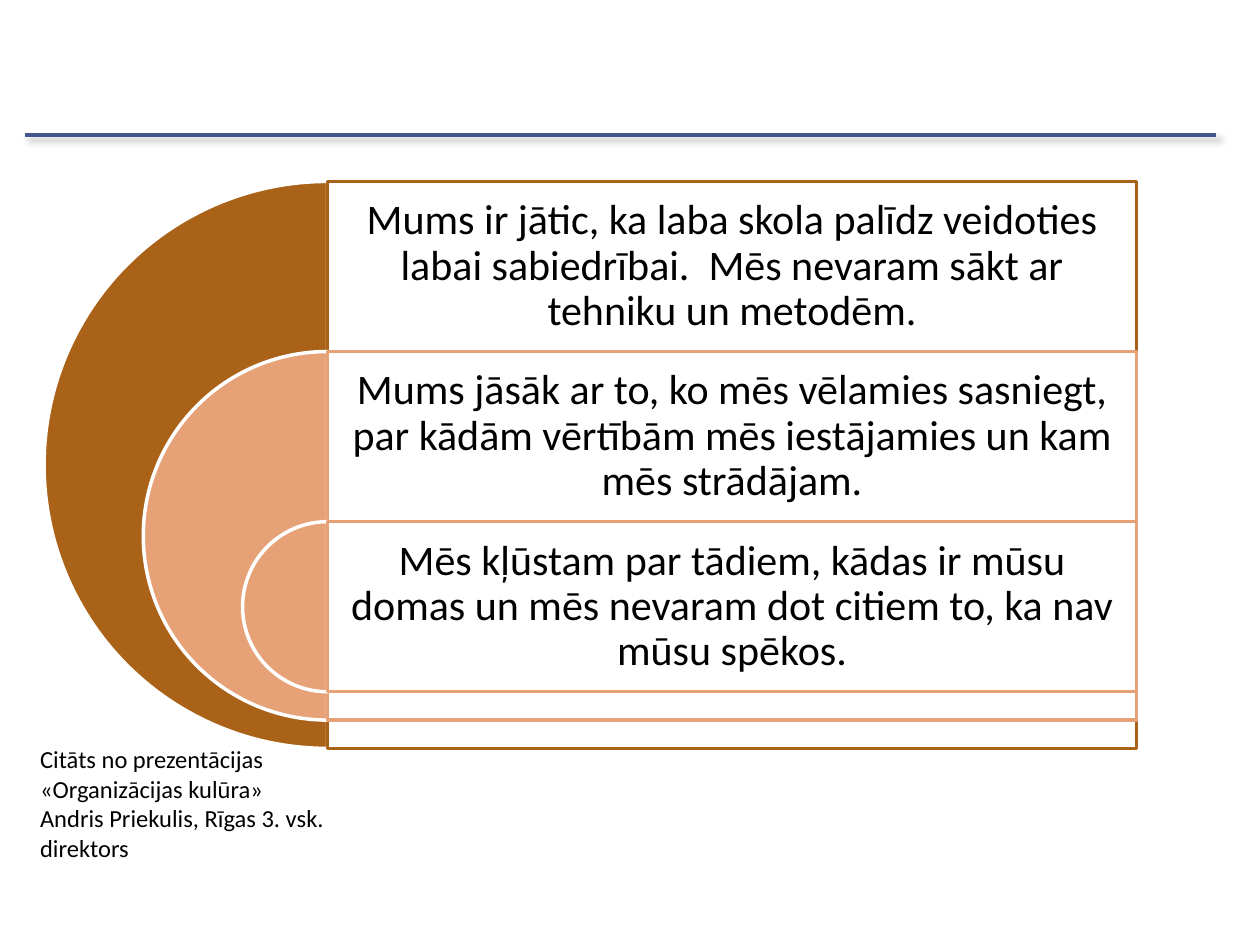
from lxml import etree
from pptx import Presentation
from pptx.dml.color import RGBColor
from pptx.enum.shapes import MSO_CONNECTOR, MSO_SHAPE
from pptx.enum.text import MSO_ANCHOR, MSO_AUTO_SIZE, PP_ALIGN
from pptx.oxml import parse_xml
from pptx.oxml.ns import nsdecls, qn
from pptx.util import Inches, Pt

LEVELS = [
    ("AA6219", "Mums ir jātic, ka laba skola palīdz veidoties labai sabiedrībai.  "
               "Mēs nevaram sākt ar tehniku un metodēm."),
    ("E6A177", "Mums jāsāk ar to, ko mēs vēlamies sasniegt, par kādām vērtībām "
               "mēs iestājamies un kam mēs strādājam."),
    ("E6A177", "Mēs kļūstam par tādiem, kādas ir mūsu domas un mēs nevaram dot "
               "citiem to, ka nav mūsu spēkos."),
]
CITATION = ["Citāts no prezentācijas «Organizācijas kulūra»",
            "Andris Priekulis, Rīgas 3. vsk. direktors"]
CENTER, TOP, DIAMETER, WIDTH = 2.6, 1.44, 4.5, 6.42
BAND, SHRINK = DIAMETER * 0.3, DIAMETER * 0.35
SHADOW = f"""<a:effectLst {nsdecls("a")}>
  <a:outerShdw blurRad="50800" dist="38100" dir="2700000" algn="tl" rotWithShape="0">
    <a:srgbClr val="000000"><a:alpha val="40000"/></a:srgbClr>
  </a:outerShdw>
</a:effectLst>"""


def color(value):
    """Turn a hex string into a colour."""
    return RGBColor.from_string(value)


def add_shape(page, kind, frame, fill, line):
    """Add a flat shape with a 2 pt outline."""
    shape = page.shapes.add_shape(kind, *map(Inches, frame))
    shape.shadow.inherit = False
    shape.fill.solid()
    shape.fill.fore_color.rgb = color(fill)
    shape.line.color.rgb = color(line)
    shape.line.width = Pt(2)
    return shape


def add_text(page, frame, lines, size):
    """Add a wrapping text box with one paragraph per line."""
    box = page.shapes.add_textbox(*map(Inches, frame))
    text = box.text_frame
    text.word_wrap = True
    text.text = "\n".join(lines)
    for para in text.paragraphs:
        para.font.name = "Calibri"
        para.font.size = Pt(size)
        para.font.color.rgb = color("000000")
    return text


def add_rule(page):
    """Draw the shadowed heading rule."""
    rule = page.shapes.add_connector(
        MSO_CONNECTOR.STRAIGHT, *map(Inches, (0.2, 1.07, 9.65, 1.07)))
    rule.line.color.rgb = color("42568D")
    rule.line.width = Pt(2.25)
    rule._element.spPr.append(parse_xml(SHADOW))


def add_level(page, index, accent, statement):
    """Draw one half circle with its panel and statement."""
    size = DIAMETER - index * SHRINK
    top = TOP + index * BAND
    pie = add_shape(page, MSO_SHAPE.PIE, (CENTER - size / 2, top, size, size),
                    accent, "FFFFFF")
    pie.adjustments[0], pie.adjustments[1] = 54, 162

    panel = add_shape(page, MSO_SHAPE.RECTANGLE, (CENTER, top, WIDTH, size),
                      "FFFFFF", accent)
    tint = panel._element.spPr.find(qn("a:solidFill")).find(qn("a:srgbClr"))
    etree.SubElement(tint, qn("a:alpha"), val="90000")

    text = add_text(page, (CENTER, top, WIDTH, BAND), [statement], 24)
    text.vertical_anchor = MSO_ANCHOR.MIDDLE
    text.margin_left = text.margin_right = Inches(0.1)
    text.margin_top = text.margin_bottom = Inches(0.1)
    para = text.paragraphs[0]
    para.alignment = PP_ALIGN.CENTER
    para.line_spacing = 0.9


def main():
    """Build and save the slide."""
    deck = Presentation()
    deck.slide_width, deck.slide_height = Inches(10), Inches(7.5)
    page = deck.slides.add_slide(deck.slide_layouts[6])
    add_rule(page)
    for index, (accent, statement) in enumerate(LEVELS):
        add_level(page, index, accent, statement)
    citation = add_text(page, (0.22, 5.86, 2.74, 1.04), CITATION, 14)
    citation.auto_size = MSO_AUTO_SIZE.SHAPE_TO_FIT_TEXT
    deck.save("out.pptx")


if __name__ == "__main__":
    main()
